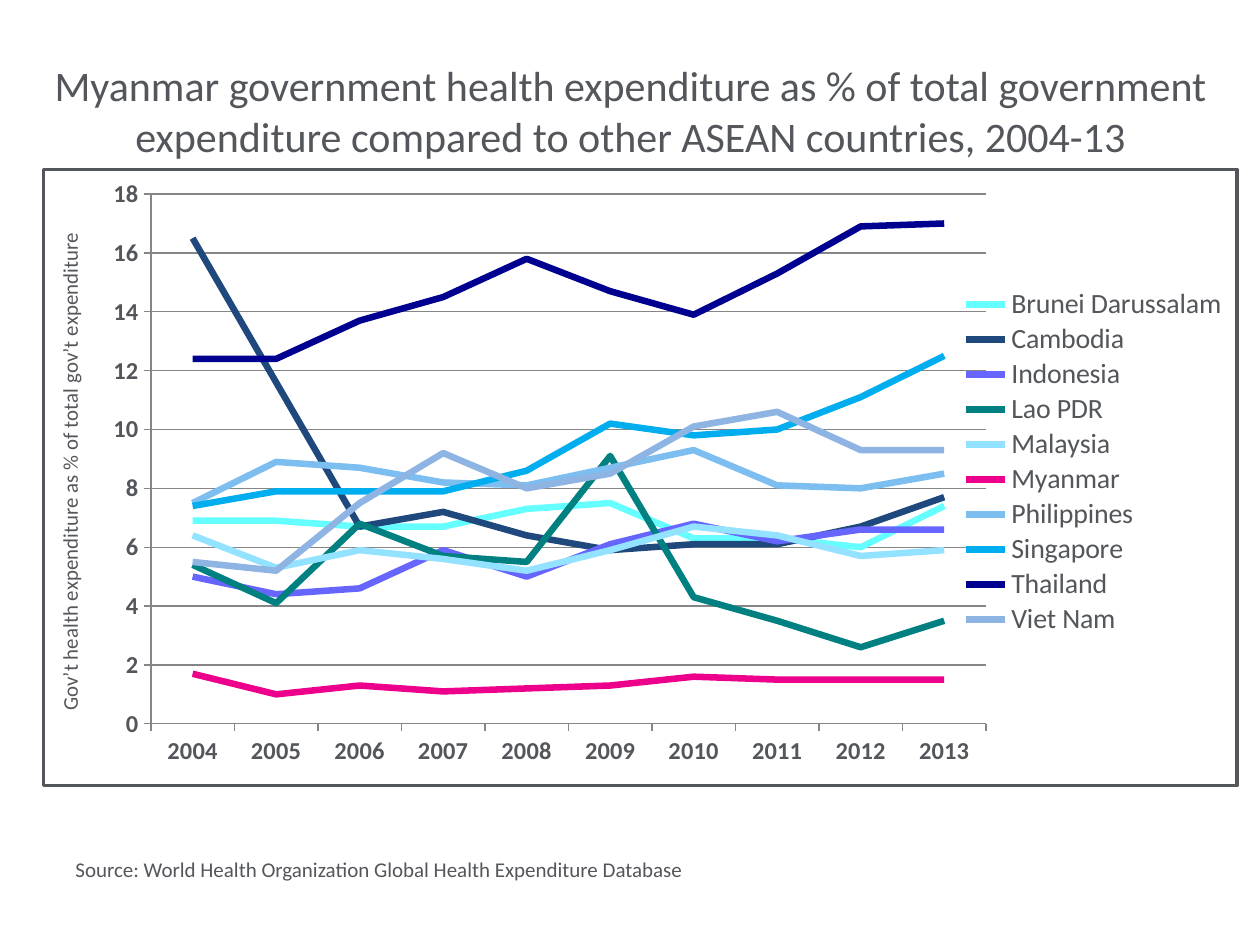
from lxml.etree import fromstring
from pptx import Presentation
from pptx.chart.data import CategoryChartData
from pptx.dml.color import RGBColor
from pptx.enum.chart import XL_CHART_TYPE, XL_LEGEND_POSITION, XL_TICK_MARK
from pptx.enum.text import MSO_ANCHOR, PP_ALIGN
from pptx.oxml.ns import nsdecls, qn
from pptx.util import Inches, Pt

COLORS = {
    "text": "53565A",
    "grid": "868686",
    "Brunei Darussalam": "66FFFF",
    "Cambodia": "1F497D",
    "Indonesia": "6666FF",
    "Lao PDR": "008080",
    "Malaysia": "93E2FF",
    "Myanmar": "EC008C",
    "Philippines": "7DBEF1",
    "Singapore": "00AEEF",
    "Thailand": "000090",
    "Viet Nam": "8EB4E3",
}
YEARS = [str(year) for year in range(2004, 2014)]
EXPENDITURE = {
    "Brunei Darussalam": (6.9, 6.9, 6.7, 6.7, 7.3, 7.5, 6.3, 6.3, 6, 7.4),
    "Cambodia": (16.5, 11.6, 6.7, 7.2, 6.4, 5.9, 6.1, 6.1, 6.7, 7.7),
    "Indonesia": (5, 4.4, 4.6, 5.9, 5, 6.1, 6.8, 6.2, 6.6, 6.6),
    "Lao PDR": (5.4, 4.1, 6.8, 5.7, 5.5, 9.1, 4.3, 3.5, 2.6, 3.5),
    "Malaysia": (6.4, 5.3, 5.9, 5.6, 5.2, 5.9, 6.7, 6.4, 5.7, 5.9),
    "Myanmar": (1.7, 1, 1.3, 1.1, 1.2, 1.3, 1.6, 1.5, 1.5, 1.5),
    "Philippines": (7.5, 8.9, 8.7, 8.2, 8.1, 8.7, 9.3, 8.1, 8, 8.5),
    "Singapore": (7.4, 7.9, 7.9, 7.9, 8.6, 10.2, 9.8, 10, 11.1, 12.5),
    "Thailand": (12.4, 12.4, 13.7, 14.5, 15.8, 14.7, 13.9, 15.3, 16.9, 17),
    "Viet Nam": (5.5, 5.2, 7.5, 9.2, 8, 8.5, 10.1, 10.6, 9.3, 9.3),
}


def manual_layout(left, top, width, height, inner=False):
    """Return a chart layout element with fractions of the chart area."""
    target = '<c:layoutTarget val="inner"/>' if inner else ""
    return fromstring(
        f'<c:layout {nsdecls("c")}><c:manualLayout>{target}'
        '<c:xMode val="edge"/><c:yMode val="edge"/>'
        f'<c:x val="{left}"/><c:y val="{top}"/><c:w val="{width}"/><c:h val="{height}"/>'
        "</c:manualLayout></c:layout>"
    )


class SlideBuilder:
    """Holds the style and the current slide."""

    def __init__(self, slide, font_name="Calibri"):
        """Keep the slide and the font name."""
        self.slide = slide
        self.font_name = font_name

    def style_font(self, font, size, bold=False):
        """Apply the common font with a size and weight."""
        font.name = self.font_name
        font.size = Pt(size)
        font.bold = bold
        font.color.rgb = RGBColor.from_string(COLORS["text"])

    def style_line(self, line, color, width):
        """Set a solid line colour and width."""
        line.color.rgb = RGBColor.from_string(COLORS[color])
        line.width = Pt(width)

    def add_title(self, text, left, top, width, height):
        """Place and format the title placeholder."""
        title = self.slide.shapes.title
        title.left, title.top, title.width, title.height = map(Inches, (left, top, width, height))
        text_frame = title.text_frame
        text_frame.text = text
        text_frame.word_wrap = True
        text_frame.vertical_anchor = MSO_ANCHOR.MIDDLE
        paragraph = text_frame.paragraphs[0]
        paragraph.alignment = PP_ALIGN.CENTER
        self.style_font(paragraph.runs[0].font, 24)

    def add_text(self, text, left, top, width, height, size):
        """Add a wrapped text box."""
        box = self.slide.shapes.add_textbox(*map(Inches, (left, top, width, height)))
        box.text_frame.word_wrap = True
        box.text_frame.text = text
        self.style_font(box.text_frame.paragraphs[0].runs[0].font, size)

    def add_line_chart(self, categories, values, axis_title, left, top, width, height):
        """Add a framed line chart with a legend on the right."""
        data = CategoryChartData()
        data.categories = categories
        for name, numbers in values.items():
            data.add_series(name, numbers)
        chart = self.slide.shapes.add_chart(
            XL_CHART_TYPE.LINE, *map(Inches, (left, top, width, height)), data
        ).chart
        chart.has_title = False
        self.style_font(chart.font, 10)
        chart.plots[0].vary_by_categories = False
        for series in chart.plots[0].series:
            series.smooth = False
            self.style_line(series.format.line, series.name, 3.75)
        self.style_axes(chart, axis_title)
        self.style_legend(chart)
        self.frame_chart(chart)

    def style_axes(self, chart, axis_title):
        """Format both axes, the gridlines and the value axis title."""
        for axis in (chart.category_axis, chart.value_axis):
            self.style_font(axis.tick_labels.font, 14, bold=True)
            self.style_line(axis.format.line, "grid", 0.75)
            axis.major_tick_mark = XL_TICK_MARK.OUTSIDE
            axis.minor_tick_mark = XL_TICK_MARK.NONE
        value_axis = chart.value_axis
        value_axis.minimum_scale, value_axis.maximum_scale, value_axis.major_unit = 0, 18, 2
        value_axis.has_major_gridlines = True
        self.style_line(value_axis.major_gridlines.format.line, "grid", 0.75)
        text_frame = value_axis.axis_title.text_frame
        text_frame.text = axis_title
        self.style_font(text_frame.paragraphs[0].runs[0].font, 12)

    def style_legend(self, chart):
        """Format and place the legend."""
        chart.has_legend = True
        legend = chart.legend
        legend.position = XL_LEGEND_POSITION.RIGHT
        legend.include_in_layout = False
        self.style_font(legend.font, 16)
        chart_space = chart.element
        legend_element = chart_space.find(".//" + qn("c:legend"))
        for layout in legend_element.findall(qn("c:layout")):
            legend_element.remove(layout)
        legend_element.find(qn("c:legendPos")).addnext(manual_layout(0.77, 0.19, 0.22, 0.57))

    def frame_chart(self, chart):
        """Place the plot area and draw the chart border."""
        plot_area = chart.element.find(".//" + qn("c:plotArea"))
        for layout in plot_area.findall(qn("c:layout")):
            plot_area.remove(layout)
        plot_area.insert(0, manual_layout(0.09, 0.04, 0.7, 0.86, inner=True))
        chart.element.find(qn("c:txPr")).addprevious(fromstring(
            f'<c:spPr {nsdecls("c", "a")}><a:noFill/><a:ln w="{Pt(2.25)}"><a:solidFill>'
            f'<a:srgbClr val="{COLORS["text"]}"/></a:solidFill></a:ln></c:spPr>'
        ))


def main():
    """Build and save the presentation."""
    presentation = Presentation()
    presentation.slide_width, presentation.slide_height = Inches(10), Inches(7.5)
    builder = SlideBuilder(presentation.slides.add_slide(presentation.slide_layouts[5]))
    builder.add_title(
        "Myanmar government health expenditure as % of total government "
        "expenditure compared to other ASEAN countries, 2004-13",
        0.17, 0.25, 9.67, 1.25,
    )
    builder.add_line_chart(
        YEARS, EXPENDITURE, "Gov’t health expenditure as % of total gov’t expenditure",
        0.33, 1.33, 9.5, 4.92,
    )
    builder.add_text(
        "Source: World Health Organization Global Health Expenditure Database",
        0.5, 6.75, 5.08, 0.3, 12,
    )
    presentation.save("out.pptx")


if __name__ == "__main__":
    main()
